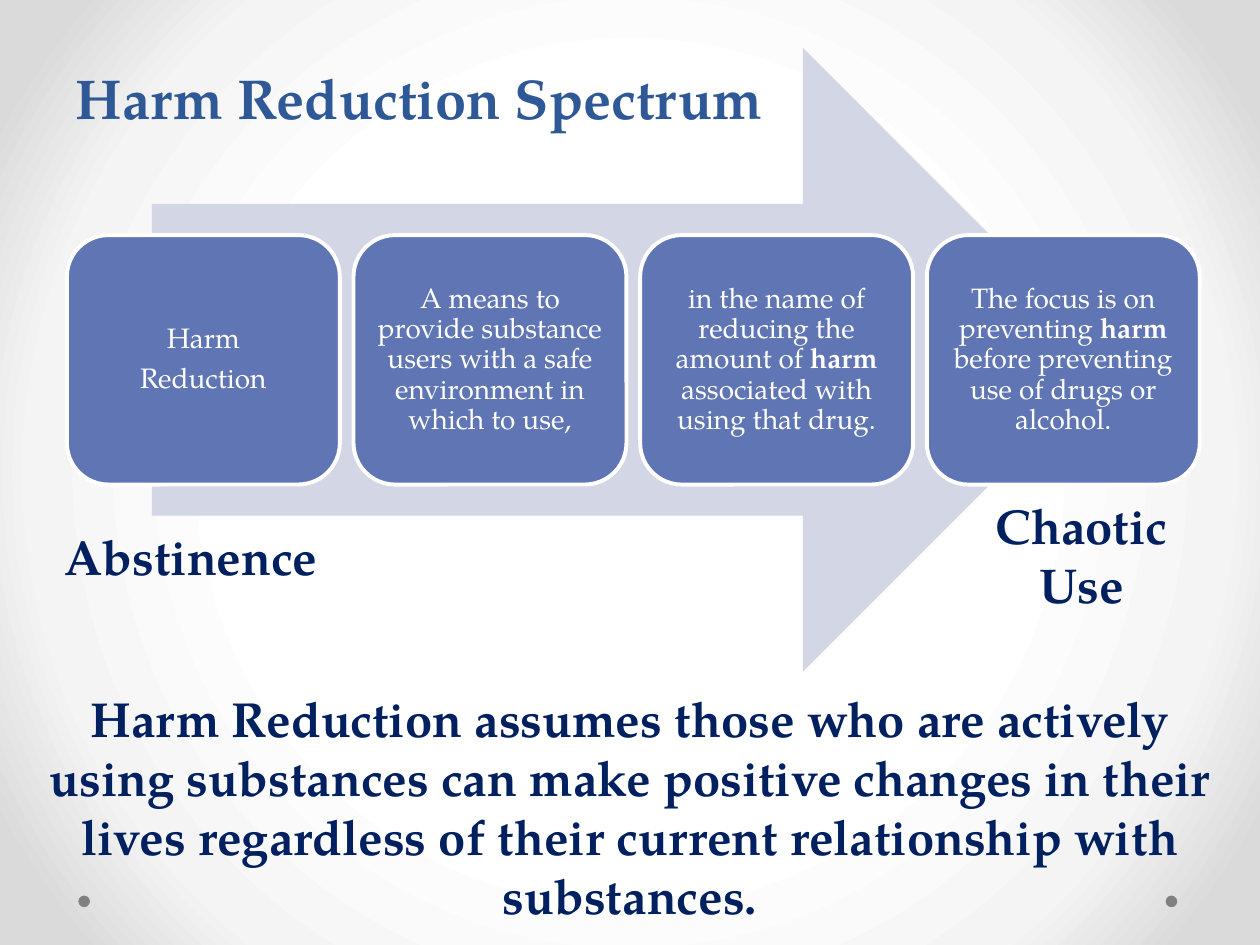
from lxml import etree
from pptx import Presentation
from pptx.dml.color import RGBColor
from pptx.enum.shapes import MSO_SHAPE
from pptx.enum.text import MSO_ANCHOR, PP_ALIGN
from pptx.oxml.ns import qn
from pptx.util import Pt

OVAL, ARROW, ROUND = MSO_SHAPE.OVAL, MSO_SHAPE.RIGHT_ARROW, MSO_SHAPE.ROUNDED_RECTANGLE
LEFT, CENTER = PP_ALIGN.LEFT, PP_ALIGN.CENTER
TOP, MIDDLE, BOTTOM = MSO_ANCHOR.TOP, MSO_ANCHOR.MIDDLE, MSO_ANCHOR.BOTTOM
FONT = "TeX Gyre Pagella"
COLORS = {
    "title": "2F5897", "navy": "002060", "card": "6076B4",
    "arrow": "D2D6E5", "dot": "808080", "white": "FFFFFF",
}
GLOW = [(50, "FFFFFF"), (76, "F4F4F4"), (92, "DADADA")]

# Each card holds paragraphs; each paragraph holds (text, bold) runs
CARDS = [
    [[("Harm", False)], [("Reduction", False)]],
    [[("A means to provide substance users with a safe environment "
       "in which to use,", False)]],
    [[("in the name of reducing the amount of ", False), ("harm", True),
      (" associated with using that drug.", False)]],
    [[("The focus is on preventing ", False), ("harm", True),
      (" before preventing use of drugs or alcohol.", False)]],
]


def rgb(name):
    return RGBColor.from_string(COLORS[name])


def paint_back(slide):
    """Radial glow, white in the middle and grey at the corners."""
    slide.background.fill.gradient()
    grad = slide.element.find(".//" + qn("a:gradFill"))
    for child in list(grad):
        grad.remove(child)
    stops = etree.SubElement(grad, qn("a:gsLst"))
    for pos, color in GLOW:
        stop = etree.SubElement(stops, qn("a:gs"), pos=str(pos * 1000))
        etree.SubElement(stop, qn("a:srgbClr"), val=color)
    path = etree.SubElement(grad, qn("a:path"), path="circle")
    etree.SubElement(path, qn("a:fillToRect"), dict.fromkeys("ltrb", "50000"))


def add_form(slide, kind, box, color):
    form = slide.shapes.add_shape(kind, *map(Pt, box))
    form.shadow.inherit = False
    form.fill.solid()
    form.fill.fore_color.rgb = rgb(color)
    form.line.fill.background()
    return form


def fill_text(frame, paras, size, color, align):
    """Write paragraphs of (text, bold) runs; return the paragraphs."""
    frame.word_wrap = True
    for i, runs in enumerate(paras):
        para = frame.add_paragraph() if i else frame.paragraphs[0]
        para.alignment = align
        for text, bold in runs:
            run = para.add_run()
            run.text = text
            run.font.name, run.font.size, run.font.bold = FONT, Pt(size), bold
            run.font.color.rgb = rgb(color)
    return frame.paragraphs


def add_label(slide, box, lines, size=28, color="navy", align=CENTER, anchor=TOP):
    frame = slide.shapes.add_textbox(*map(Pt, box)).text_frame
    frame.vertical_anchor = anchor
    return fill_text(frame, [[(line, True)] for line in lines], size, color, align)


def add_card(slide, box, paras):
    card = add_form(slide, ROUND, box, "card")
    card.line.color.rgb = rgb("white")
    card.line.width = Pt(2.25)
    frame = card.text_frame
    frame.vertical_anchor = MIDDLE
    frame.margin_left = frame.margin_right = Pt(5)
    frame.margin_top = frame.margin_bottom = Pt(5)
    for para in fill_text(frame, paras, 16, "white", CENTER):
        para.line_spacing = 0.9
        para.space_after = Pt(5.6)


def add_flow(slide, box):
    """Wide arrow with a row of evenly spaced cards over it."""
    left, top, width, height = box
    inset = width * 0.075
    add_form(slide, ARROW, (left + inset, top, width - 2 * inset, height), "arrow")
    wide, high = 156, height * 0.4
    step = (width - wide) / (len(CARDS) - 1)
    for i, paras in enumerate(CARDS):
        add_card(slide, (left + i * step, top + (height - high) / 2, wide, high), paras)


def add_dots(slide, box):
    left, top, width, size = box
    for x in (left, left + width - size):
        add_form(slide, OVAL, (x, top, size, size), "dot")


def main():
    deck = Presentation()
    deck.slide_width, deck.slide_height = Pt(720), Pt(540)
    slide = deck.slides.add_slide(deck.slide_layouts[6])
    paint_back(slide)
    add_dots(slide, (44.8, 511.8, 627.9, 6.6))

    # Title
    title = add_label(slide, (36, 12, 408, 66), ["Harm Reduction Spectrum"],
                      32, "title", LEFT, BOTTOM)
    title[0].line_spacing = Pt(58)

    # Spectrum and its two ends
    add_flow(slide, (38.2, 27.4, 647.4, 356.4))
    add_label(slide, (30, 297.5, 246, 41), ["Abstinence"], align=LEFT)
    add_label(slide, (546, 279.5, 144, 124), ["Chaotic", "Use"])

    # Closing statement
    add_label(slide, (18, 390, 684, 143.5), [
        "Harm Reduction assumes those who are actively using substances can make "
        "positive changes in their lives regardless of their current relationship "
        "with substances."])
    deck.save("out.pptx")


if __name__ == "__main__":
    main()
